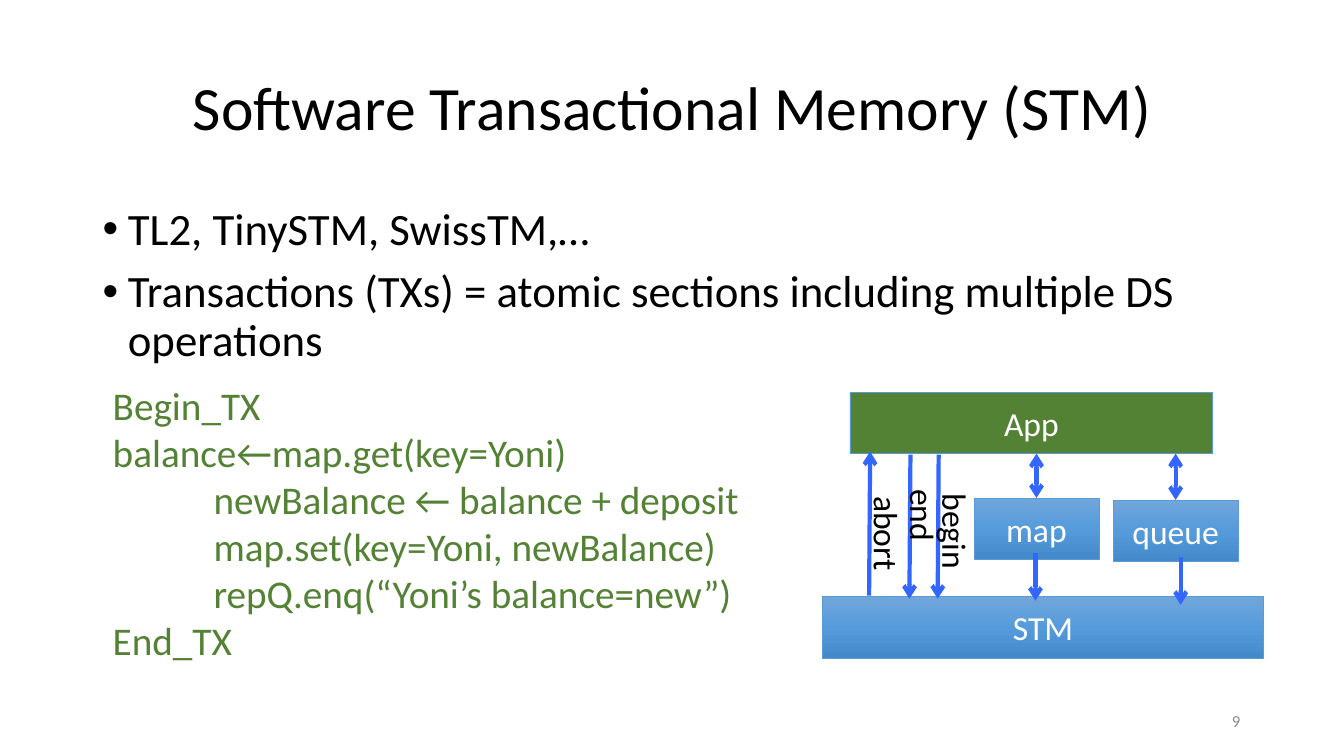
from copy import deepcopy

from lxml import etree
from pptx import Presentation, util as u
from pptx.dml.color import RGBColor
from pptx.enum import shapes, text
from pptx.oxml.ns import qn

TITLE = "Software Transactional Memory (STM)"
BULLETS = [
    "TL2, TinySTM, SwissTM,…",
    "Transactions (TXs) = atomic sections including multiple DS operations",
]
CODE = [
    (0.5, "Begin_TX"),
    (0.5, "balance←map.get(key=Yoni)"),
    (1.5, "newBalance ← balance + deposit"),
    (1.5, "map.set(key=Yoni, newBalance)"),
    (1.5, "repQ.enq(“Yoni’s balance=new”)"),
    (0.5, "End_TX"),
]
PAGE = "9"
BLACK, WHITE, GREEN, GRAY = "000000", "FFFFFF", "548235", "8C8C8C"
EDGE, ARROW = "5B9BD5", "3366FF"
GRADIENT = [(0, "71A6DB"), (0.5, "559BDB"), (1, "448ACA")]
BOX_H = 0.61
BOXES = {
    "STM": (8.16, 5.92, 4.37, None),
    "map": (9.66, 4.94, 1.24, None),
    "queue": (11.04, 4.96, 1.24, None),
    "App": (8.43, 3.89, 3.6, GREEN),
}
CALLS = [
    ("begin", 9.48, 5.27, 1, "CENTER"),
    ("end", 9.16, 5.11, 0.8, "CENTER"),
    ("abort", 8.8, 5.26, 1, "RIGHT"),
]
CALL_LINES = [(9.31, 4.51, "tail"), (9.03, 4.51, "tail"), (8.63, 4.48, "head")]
CALL_LEN = 1.43
STM_LINES = [(10.27, 5.49), (11.71, 5.53)]
STM_LEN = 0.47

prs = Presentation()
prs.slide_width, prs.slide_height = u.Inches(13.33), u.Inches(7.5)
s = prs.slides.add_slide(prs.slide_layouts[6])


def rgb(color):
    return RGBColor.from_string(color)


def write(sp, lines, size=24, color=BLACK, align="LEFT", anchor="TOP",
          spacing=None, before=0, bullet=False):
    tf = sp.text_frame
    tf.word_wrap = True
    tf.vertical_anchor = text.MSO_ANCHOR[anchor]
    for i, (indent, line) in enumerate(lines):
        p = tf.add_paragraph() if i else tf.paragraphs[0]
        p.alignment = text.PP_ALIGN[align]
        p.line_spacing, p.space_before = spacing, u.Pt(before)
        pPr = p._p.get_or_add_pPr()
        pPr.set("marL", str(u.Inches(indent)))
        if bullet:
            pPr.set("indent", str(-u.Inches(indent)))
            etree.SubElement(pPr, qn("a:buFont")).set("typeface", "Arial")
            etree.SubElement(pPr, qn("a:buChar")).set("char", "•")
        r = p.add_run()
        r.text = line
        r.font.size, r.font.name = u.Pt(size), "Calibri"
        r.font.color.rgb = rgb(color)


def textbox(x, y, w, h, lines, **fmt):
    sp = s.shapes.add_textbox(*map(u.Inches, (x, y, w, h)))
    write(sp, lines, **fmt)
    return sp


def box(label, x, y, w, color):
    sp = s.shapes.add_shape(shapes.MSO_SHAPE.RECTANGLE,
                            *map(u.Inches, (x, y, w, BOX_H)))
    sp.shadow.inherit = False
    if color:
        sp.fill.solid()
        sp.fill.fore_color.rgb = rgb(color)
    else:
        sp.fill.gradient()
        sp.fill.gradient_angle = 270
        stops = sp._element.spPr.find(".//" + qn("a:gsLst"))
        stops.insert(1, deepcopy(stops[0]))
        for stop, (pos, shade) in zip(sp.fill.gradient_stops, GRADIENT):
            stop.position, stop.color.rgb = pos, rgb(shade)
    sp.line.color.rgb, sp.line.width = rgb(EDGE), u.Pt(0.5)
    write(sp, [(0, label)], color=WHITE, align="CENTER", anchor="MIDDLE")
    return sp


def arrow(x1, y1, x2, y2, ends):
    c = s.shapes.add_connector(shapes.MSO_CONNECTOR.STRAIGHT,
                               *map(u.Inches, (x1, y1, x2, y2)))
    c.line.color.rgb, c.line.width = rgb(ARROW), u.Pt(3)
    for end in ends:
        etree.SubElement(c.line._get_or_add_ln(), qn(f"a:{end}End")).set("type", "arrow")
    etree.SubElement(c._element.spPr, qn("a:effectLst"))
    return c


textbox(0.92, 0.37, 11.5, 1.45, [(0, TITLE)], size=44, align="CENTER",
        anchor="MIDDLE", spacing=0.9)
textbox(0.92, 2, 11.5, 1.71, [(0.25, b) for b in BULLETS], size=32,
        spacing=0.9, before=10, bullet=True)
textbox(9.4, 6.95, 3, 0.4, [(0, PAGE)], size=12, color=GRAY, align="RIGHT",
        anchor="MIDDLE")

boxes = {label: box(label, *place) for label, place in BOXES.items()}

for x, y, end in CALL_LINES:
    arrow(x, y, x - 0.01, y + CALL_LEN, [end])
for label, cx, cy, w, align in CALLS:
    call = textbox(cx - w / 2, cy - 0.25, w, 0.5, [(0, label)], align=align)
    call.rotation = 90

app_bottom = BOXES["App"][1] + BOX_H
for label in ("map", "queue"):
    x, y, w, _ = BOXES[label]
    mid = x + w / 2
    arrow(mid, app_bottom, mid, y, ["head", "tail"]).end_connect(boxes[label], 0)
for x, y in STM_LINES:
    arrow(x, y, x, y + STM_LEN, ["tail"])

textbox(0.52, 3.73, 7.64, 2.93, CODE, size=28, color=GREEN)

prs.save("out.pptx")
